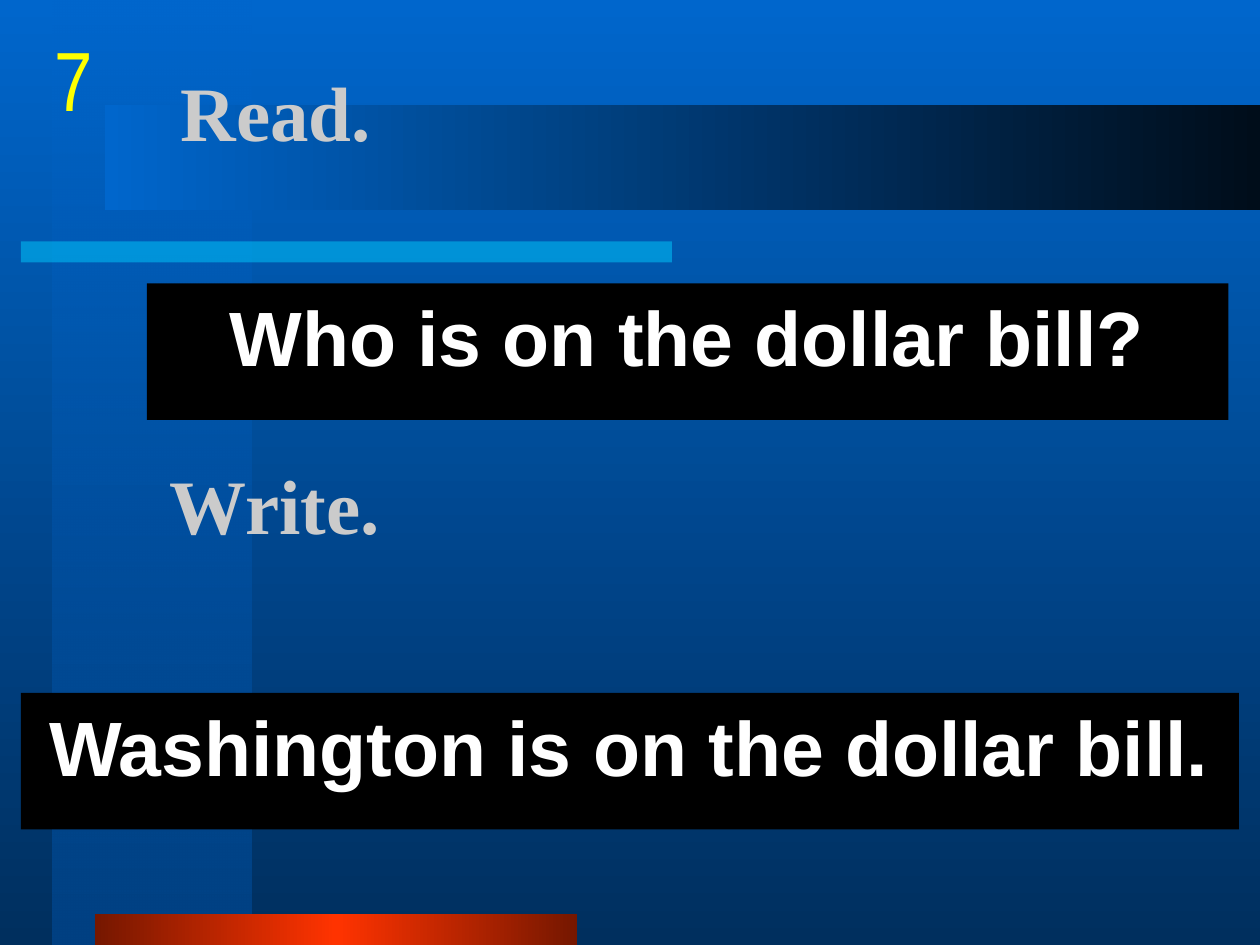
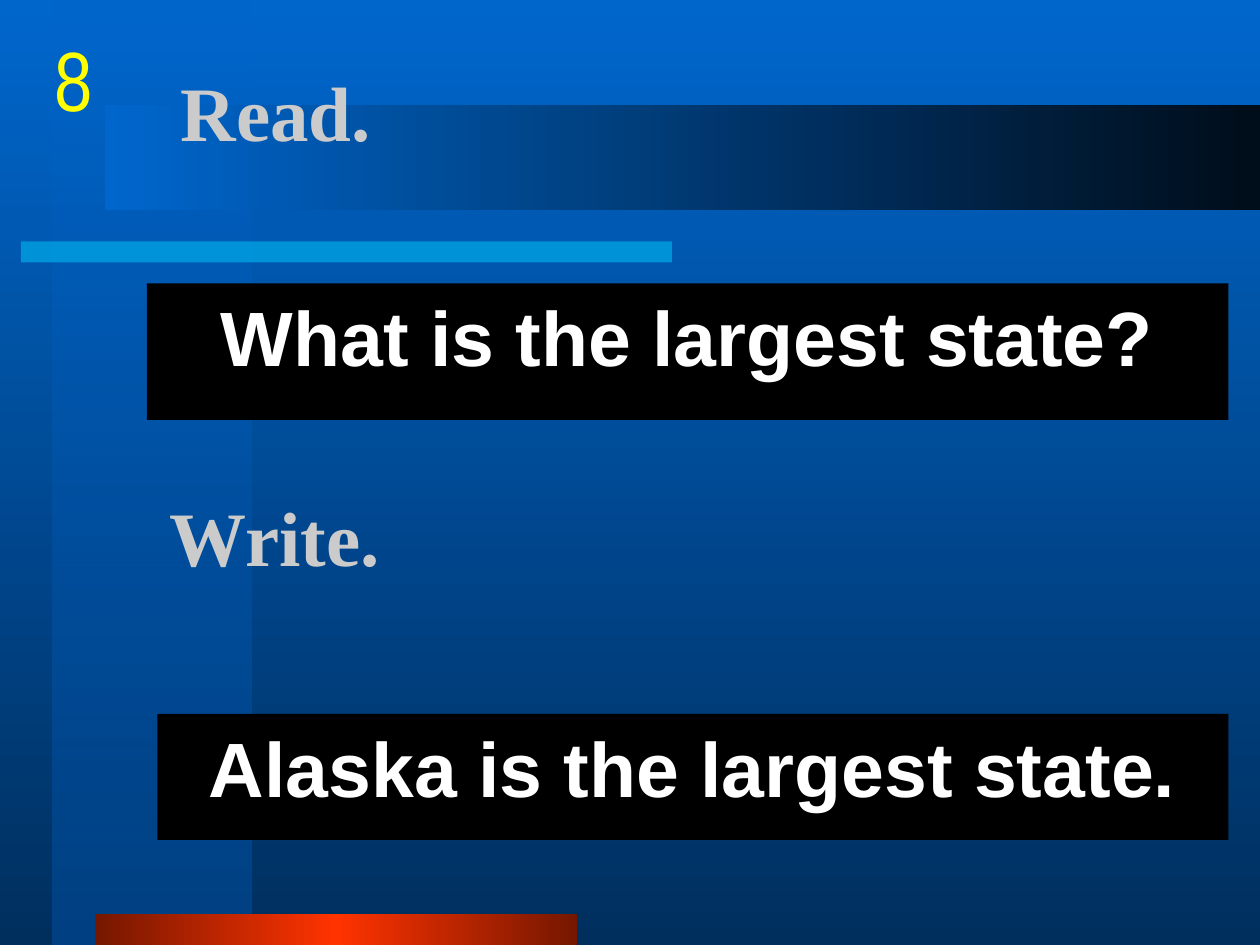
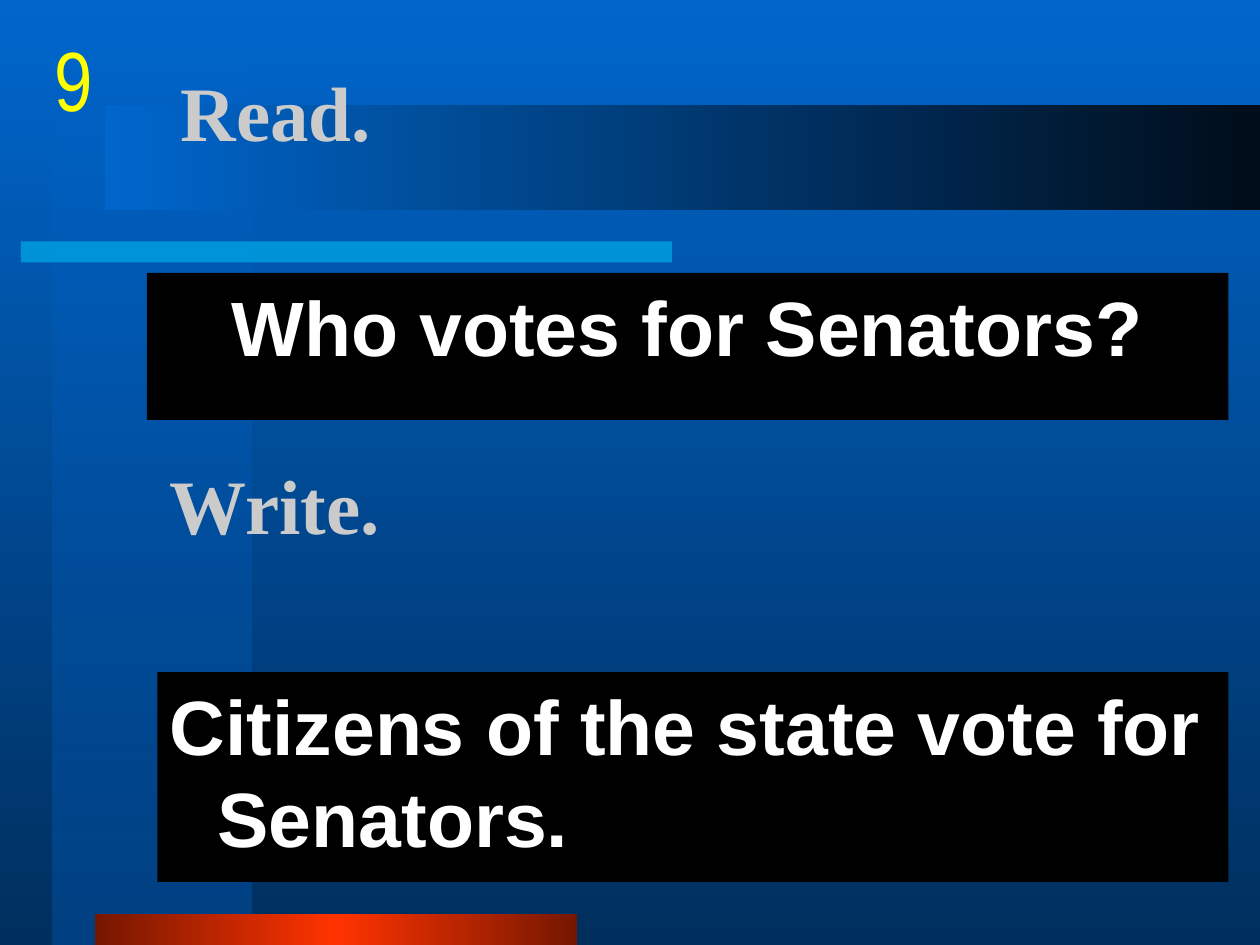
from lxml.etree import SubElement
from pptx import Presentation
from pptx.dml.color import RGBColor
from pptx.enum.shapes import MSO_SHAPE as Shape
from pptx.enum.text import MSO_ANCHOR as Anchor, PP_ALIGN as Align
from pptx.oxml.ns import qn
from pptx.util import Inches, Pt

BLUE = RGBColor(0x00, 0x66, 0xCC)
NAVY = RGBColor(0x00, 0x2F, 0x5E)
DEEP = RGBColor(0x00, 0x41, 0x83)
NIGHT = RGBColor(0x00, 0x0D, 0x1A)
CYAN = RGBColor(0x00, 0xCC, 0xFF)
RED = RGBColor(0xFF, 0x33, 0x00)
RUST = RGBColor(0x75, 0x17, 0x00)
YELLOW = RGBColor(0xFF, 0xFF, 0x00)
ORANGE = RGBColor(0xFF, 0x99, 0x33)
SILVER = RGBColor(0xCB, 0xCB, 0xCB)
WHITE = RGBColor(0xFF, 0xFF, 0xFF)
BLACK = RGBColor(0x00, 0x00, 0x00)

SERIF, SANS, NARROW = "Times New Roman", "Arial", "Arial Narrow"
UNIT = Inches(10) // 120  # the slide is 120 columns by 90 rows
HANG = Inches(0.38)

# number, question, its box, top row of "Write.", answer, its box, alignment
CARDS = [
    (7, "Who is on the dollar bill?", (14, 27, 103, 13), 38,
     "Washington is on the dollar bill.", (2, 66, 116, 13), Align.CENTER),
    (8, "What is the largest state?", (14, 27, 103, 13), 41,
     "Alaska is the largest state.", (15, 68, 102, 12), Align.CENTER),
    (9, "Who votes for Senators?", (14, 26, 103, 14), 38,
     "Citizens of the state vote for Senators.", (15, 64, 102, 20), Align.LEFT),
]


def grid(*cells):
    return [UNIT * cell for cell in cells]


def add_alpha(color, share):
    SubElement(color, qn("a:alpha"), val=str(share * 1000))


def blend(node, colors, angle=None, alpha=None):
    """Turn the solid fill in node into a gradient, from the centre if no angle."""
    solid = next(node.iter(qn("a:solidFill")))
    grad = solid.makeelement(qn("a:gradFill"), {"rotWithShape": "1"})
    stops = SubElement(grad, qn("a:gsLst"))
    for i, color in enumerate(colors):
        pos = 100000 * i // (len(colors) - 1)
        stop = SubElement(stops, qn("a:gs"), pos=str(pos))
        tint = SubElement(stop, qn("a:srgbClr"), val=str(color))
        if alpha and i == 0:
            add_alpha(tint, alpha)
    if angle is None:
        path = SubElement(grad, qn("a:path"), path="rect")
        SubElement(path, qn("a:fillToRect"),
                   dict.fromkeys("ltrb", "50000"))
    else:
        SubElement(grad, qn("a:lin"), ang=str(angle * 60000), scaled="1")
    solid.getparent().replace(solid, grad)


def add_band(slide, cells, color):
    band = slide.shapes.add_shape(Shape.RECTANGLE, *grid(*cells))
    band.shadow.inherit = False
    band.line.fill.background()
    band.fill.solid()
    band.fill.fore_color.rgb = color
    return band.element


def dress(master, slide):
    """Give the master its background and bands, drawn by way of a slide."""
    fill = master.background.fill
    fill.solid()
    fill.fore_color.rgb = BLUE
    blend(master.element, [BLUE, NAVY], 90)

    stripe = add_band(slide, (5, 0, 19, 90), BLUE)
    blend(stripe, [BLUE, DEEP], 90, alpha=50)
    rule = add_band(slide, (2, 23, 62, 2), CYAN)
    add_alpha(next(rule.iter(qn("a:srgbClr"))), 50)
    foot = add_band(slide, (9, 87, 46, 3), RED)
    blend(foot, [RUST, RED, RUST], 0)
    head = add_band(slide, (10, 10, 110, 10), BLUE)
    blend(head, [BLUE, NIGHT], 0)
    for i, band in enumerate((stripe, rule, foot, head)):
        master.shapes.element.insert(2 + i, band)


def write(box, text, size, name, color, bold=True, align=Align.LEFT,
          anchor=Anchor.TOP):
    frame = box.text_frame
    frame.word_wrap = True
    frame.vertical_anchor = anchor
    para = frame.paragraphs[0]
    para.text = text
    para.alignment = align
    font = para.font
    font.size, font.name, font.bold = Pt(size), name, bold
    font.color.rgb = color
    return para


def add_label(box, text):
    write(box, text, 44, SERIF, SILVER, anchor=Anchor.MIDDLE)


def add_panel(slide, text, cells, align=Align.CENTER):
    box = slide.shapes.add_textbox(*grid(*cells))
    box.fill.solid()
    box.fill.fore_color.rgb = BLACK
    para = write(box, text, 44, SANS, WHITE, align=align)
    para.space_before = Pt(4)
    props = para._p.get_or_add_pPr()
    props.set("marL", str(HANG))
    props.set("indent", str(-HANG))


def add_number(slide, number):
    box = slide.shapes.add_textbox(*grid(4, 2, 5, 10))
    para = write(box, str(number), 48, NARROW, YELLOW, False, Align.CENTER)
    box.text_frame.word_wrap = False
    run = para.runs[0]
    run.font.color.rgb = YELLOW
    blend(run._r, [YELLOW, ORANGE])


def add_card(slide, number, ask, ask_box, row, reply, reply_box, align):
    title = slide.shapes.title
    title.left, title.top, title.width, title.height = grid(16, 3, 102, 15)
    add_label(title, "Read.")
    add_panel(slide, ask, ask_box)
    add_label(slide.shapes.add_textbox(*grid(15, row, 102, 20)), "Write.")
    add_panel(slide, reply, reply_box, align)
    add_number(slide, number)


def main():
    deck = Presentation()
    deck.slide_width, deck.slide_height = grid(120, 90)
    for card in CARDS:
        slide = deck.slides.add_slide(deck.slide_layouts[5])
        if card is CARDS[0]:
            dress(deck.slide_master, slide)
        add_card(slide, *card)
    deck.save("out.pptx")


if __name__ == "__main__":
    main()
